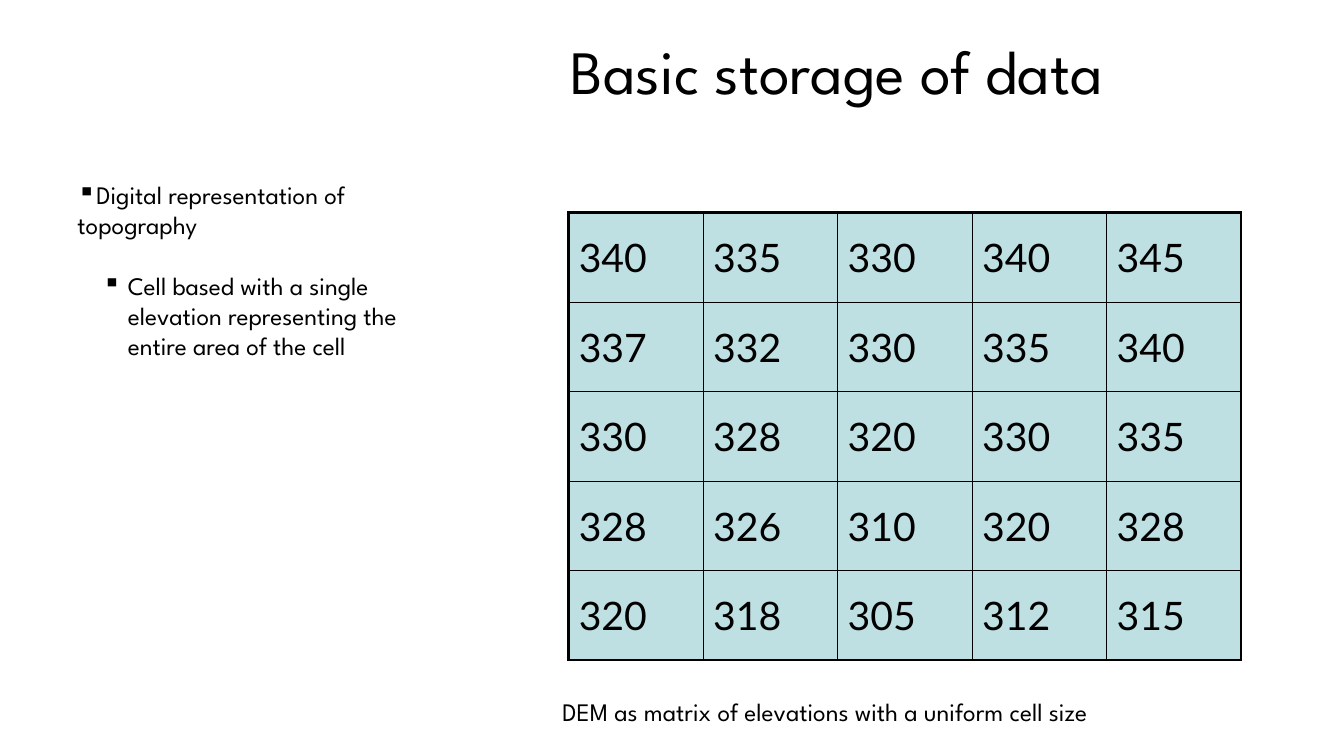
"""Build a slide showing an elevation matrix and how it is stored."""
from dataclasses import dataclass

from lxml.etree import SubElement
from pptx import Presentation
from pptx.dml.color import RGBColor
from pptx.enum.text import MSO_ANCHOR, MSO_AUTO_SIZE, PP_ALIGN
from pptx.oxml.ns import qn
from pptx.slide import Slide
from pptx.table import _Cell
from pptx.text.text import TextFrame, _Paragraph
from pptx.util import Inches, Pt


@dataclass(frozen=True)
class Theme:
    ink: str = "000000"
    cell: str = "BFE0E3"
    text_font: str = "League Spartan"
    number_font: str = "Lato"
    title_size: float = 44
    text_size: float = 18
    number_size: float = 28
    outer_line: float = 2.25
    inner_line: float = 1


@dataclass(frozen=True)
class Box:
    left: float
    top: float
    width: float
    height: float

    def lengths(self) -> tuple:
        return tuple(map(Inches, (self.left, self.top, self.width, self.height)))


@dataclass(frozen=True)
class Bullet:
    text: str
    margin: float
    hanging: float
    space_before: float


THEME = Theme()
TITLE_BOX = Box(5.56, 0.36, 8.5, 1.25)
BULLETS_BOX = Box(0.67, 1.73, 3.94, 1.92)
MATRIX_BOX = Box(5.64, 2.11, 6.67, 4.44)
CAPTION_BOX = Box(5.48, 6.86, 6.33, 0.4)
BULLETS = (
    Bullet("Digital representation of topography", 0, 0, 0),
    Bullet("Cell based with a single elevation representing the entire area of the cell",
           0.5, 0.25, 21.6),
)
ELEVATIONS = (
    (340, 335, 330, 340, 345),
    (337, 332, 330, 335, 340),
    (330, 328, 320, 330, 335),
    (328, 326, 310, 320, 328),
    (320, 318, 305, 312, 315),
)


def style_runs(para: _Paragraph, size: float, font: str = THEME.text_font) -> None:
    for span in para.runs:
        span.font.size = Pt(size)
        span.font.name = font
        span.font.color.rgb = RGBColor.from_string(THEME.ink)


def add_title(page: Slide, text: str) -> None:
    title = page.shapes.title
    title.left, title.top, title.width, title.height = TITLE_BOX.lengths()
    frame = title.text_frame
    frame.text = text
    frame.vertical_anchor = MSO_ANCHOR.TOP
    frame.auto_size = MSO_AUTO_SIZE.NONE
    para = frame.paragraphs[0]
    para.alignment = PP_ALIGN.LEFT
    para.line_spacing = 0.9
    style_runs(para, THEME.title_size)


def add_text(page: Slide, box: Box, lines: list[str], wrap: bool) -> TextFrame:
    frame = page.shapes.add_textbox(*box.lengths()).text_frame
    frame.word_wrap = wrap
    frame.auto_size = MSO_AUTO_SIZE.SHAPE_TO_FIT_TEXT
    frame.text = "\n".join(lines)
    for para in frame.paragraphs:
        style_runs(para, THEME.text_size)
    return frame


def format_bullet(para: _Paragraph, bullet: Bullet) -> None:
    para.space_before = Pt(bullet.space_before)
    properties = para._p.get_or_add_pPr()
    properties.set("marL", str(Inches(bullet.margin)))
    properties.set("indent", str(-Inches(bullet.hanging)))
    SubElement(properties, qn("a:buChar"), char="▪")


def add_bullets(page: Slide) -> None:
    frame = add_text(page, BULLETS_BOX, [bullet.text for bullet in BULLETS], True)
    for para, bullet in zip(frame.paragraphs, BULLETS):
        format_bullet(para, bullet)


def set_borders(cell: _Cell, outer_sides: dict[str, bool]) -> None:
    properties = cell._tc.get_or_add_tcPr()
    for side, outer in outer_sides.items():
        width = THEME.outer_line if outer else THEME.inner_line
        line = SubElement(properties, qn(f"a:ln{side}"), w=str(Pt(width)))
        fill = SubElement(line, qn("a:solidFill"))
        SubElement(fill, qn("a:srgbClr"), val=THEME.ink)


def add_matrix(page: Slide) -> None:
    row_count, column_count = len(ELEVATIONS), len(ELEVATIONS[0])
    table = page.shapes.add_table(row_count, column_count, *MATRIX_BOX.lengths()).table
    table.first_row = table.horz_banding = False
    for row, elevations in enumerate(ELEVATIONS):
        for column, elevation in enumerate(elevations):
            cell = table.cell(row, column)
            cell.text_frame.text = str(elevation)
            cell.vertical_anchor = MSO_ANCHOR.MIDDLE
            style_runs(cell.text_frame.paragraphs[0], THEME.number_size, THEME.number_font)
            set_borders(cell, {"L": column == 0, "R": column == column_count - 1,
                               "T": row == 0, "B": row == row_count - 1})
            cell.fill.solid()
            cell.fill.fore_color.rgb = RGBColor.from_string(THEME.cell)


def main() -> None:
    deck = Presentation()
    deck.slide_width, deck.slide_height = Inches(13.33), Inches(7.5)
    page = deck.slides.add_slide(deck.slide_layouts.get_by_name("Title Only"))
    add_bullets(page)
    add_title(page, "Basic storage of data")
    add_matrix(page)
    add_text(page, CAPTION_BOX, ["DEM as matrix of elevations with a uniform cell size"], False)
    deck.save("out.pptx")


if __name__ == "__main__":
    main()
